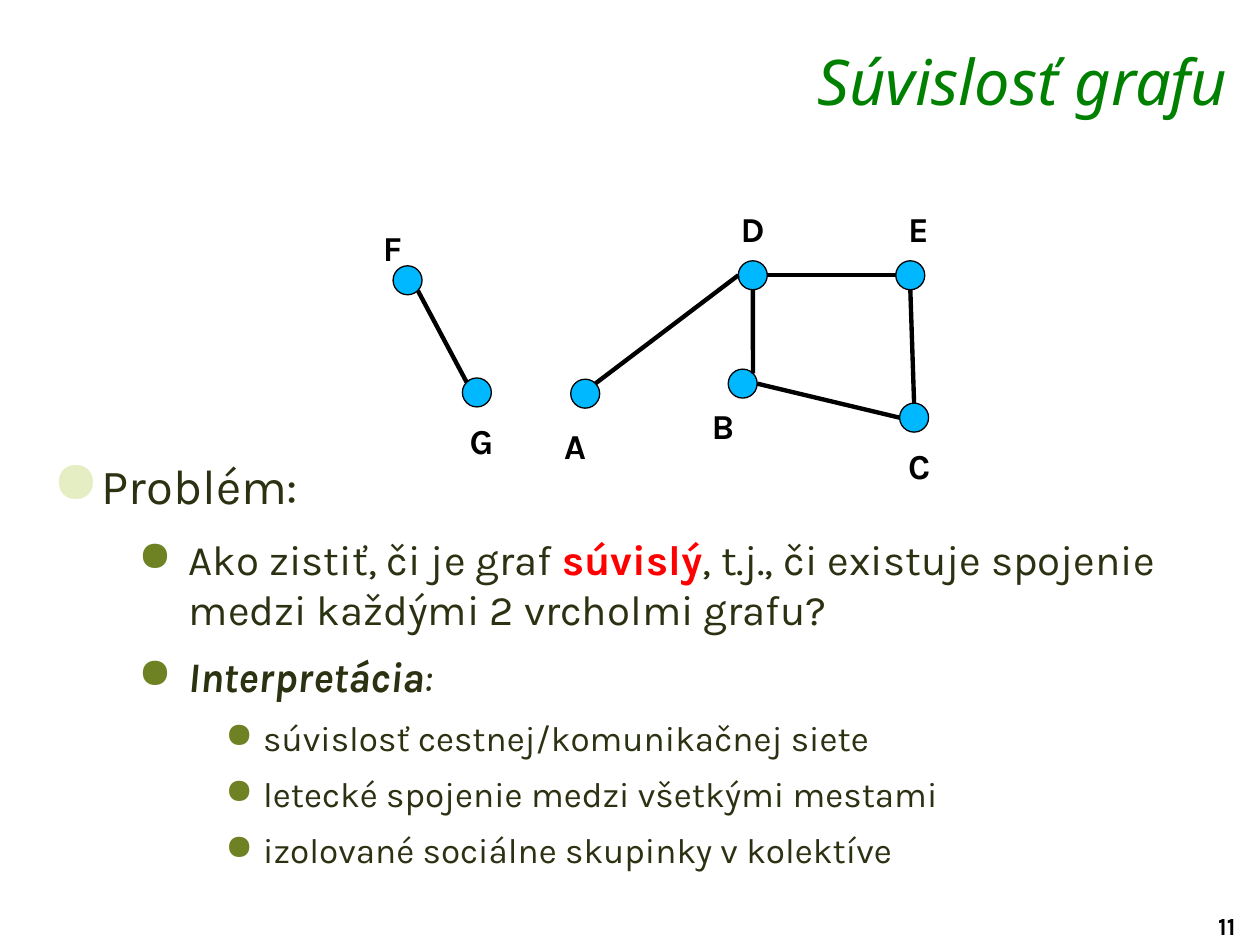
from math import cos, radians, sin

from lxml import etree
from pptx import Presentation
from pptx.dml.color import RGBColor
from pptx.enum.shapes import MSO_CONNECTOR, MSO_SHAPE
from pptx.enum.text import PP_ALIGN
from pptx.oxml.ns import qn
from pptx.util import Inches, Pt

OLIVE, BLACK, RED = "2B3212", "000000", "FF0000"
NODE_SIZE = 0.23


def color(value):
    return RGBColor.from_string(value)


def add_run(para, text, size, fill, font="Karla", bold=False, italic=False):
    span = para.add_run()
    span.text = text
    span.font.name = font
    span.font.size = Pt(size)
    span.font.bold = bold
    span.font.italic = italic
    span.font.color.rgb = color(fill)


deck = Presentation()
deck.slide_width, deck.slide_height = Inches(10), Inches(7.5)
page = deck.slides.add_slide(deck.slide_layouts[6])
shapes = page.shapes

# Slide number and title
box = shapes.add_textbox(Inches(9.57), Inches(7.18), Inches(0.43), Inches(0.32))
add_run(box.text_frame.paragraphs[0], "11", 14, BLACK, bold=True)

box = shapes.add_textbox(Inches(2.29), Inches(0.29), Inches(7.55), Inches(0.6))
box.text_frame.word_wrap = True
para = box.text_frame.paragraphs[0]
para.alignment = PP_ALIGN.RIGHT
add_run(para, "Súvislosť grafu", 36, "008000", font="Noto Sans", italic=True)

# Bulleted text: level -> size, text indent, hanging indent, bullet colour, bullet percent
levels = [
    (28, 0.39, 0.39, "E5EEC2", 120),
    (24, 1.08, 0.4, "6E8224", 100),
    (20, 1.67, 0.3, "6E8224", 100),
]
# Each run: text, colour, bold, italic
items = [
    (0, [("Problém:", OLIVE, False, False)]),
    (1, [("Ako zistiť, či je graf ", OLIVE, False, False),
         ("súvislý", RED, True, False),
         (", t.j., či existuje spojenie medzi každými 2 vrcholmi grafu?", OLIVE, False, False)]),
    (1, [("Interpretácia", OLIVE, True, True), (":", OLIVE, False, True)]),
    (2, [("súvislosť cestnej/komunikačnej siete", OLIVE, False, False)]),
    (2, [("letecké spojenie medzi všetkými mestami", OLIVE, False, False)]),
    (2, [("izolované sociálne skupinky v kolektíve", OLIVE, False, False)]),
]
box = shapes.add_textbox(Inches(0.32), Inches(3.57), Inches(9.38), Inches(3.63))
frame = box.text_frame
frame.word_wrap = True
for index, (level, runs) in enumerate(items):
    size, indent, hanging, bullet_color, percent = levels[level]
    para = frame.add_paragraph() if index else frame.paragraphs[0]
    para.level = level
    para.space_before = Pt(0.2 * size if index else 0)
    para.space_after = Pt(0.2 * size)
    properties = para._p.get_or_add_pPr()
    properties.set("marL", str(Inches(indent)))
    properties.set("indent", str(-Inches(hanging)))
    bullet_fill = etree.SubElement(properties, qn("a:buClr"))
    etree.SubElement(bullet_fill, qn("a:srgbClr"), val=bullet_color)
    etree.SubElement(properties, qn("a:buSzPct"), val=str(percent * 1000))
    etree.SubElement(properties, qn("a:buChar"), char="●")
    for text, fill, bold, italic in runs:
        add_run(para, text, size, fill, bold=bold, italic=italic)

# Graph: node left, top, then label left, top
nodes = {
    "A": (4.53, 3.01, 4.38, 3.32),
    "B": (5.78, 2.93, 5.55, 3.16),
    "C": (7.14, 3.2, 7.11, 3.48),
    "D": (5.86, 2.07, 5.78, 1.6),
    "E": (7.11, 2.07, 7.11, 1.6),
    "F": (3.12, 2.11, 2.94, 1.75),
    "G": (3.67, 3, 3.63, 3.28),
}
for name, (left, top, label_left, label_top) in nodes.items():
    node = shapes.add_shape(MSO_SHAPE.OVAL, Inches(left), Inches(top),
                            Inches(NODE_SIZE), Inches(NODE_SIZE))
    node.shadow.inherit = False
    node.fill.solid()
    node.fill.fore_color.rgb = color("00B8FF")
    node.line.color.rgb = color(BLACK)
    node.line.width = Pt(0.75)
    label = shapes.add_textbox(Inches(label_left), Inches(label_top), Inches(0.37), Inches(0.44))
    label.text_frame.word_wrap = False
    add_run(label.text_frame.paragraphs[0], name, 20, BLACK, bold=True)

# Edges join points on the node rims, given by angle clockwise from the right
edges = [
    ("A", -45, "D", 180),
    ("D", 0, "E", 180),
    ("B", -45, "D", 90),
    ("B", 0, "C", 180),
    ("C", -90, "E", 90),
    ("G", -135, "F", 45),
]
for start, start_angle, end, end_angle in edges:
    points = []
    for name, angle in ((start, start_angle), (end, end_angle)):
        left, top = nodes[name][:2]
        points.append(Inches(left + NODE_SIZE / 2 * (1 + cos(radians(angle)))))
        points.append(Inches(top + NODE_SIZE / 2 * (1 + sin(radians(angle)))))
    edge = shapes.add_connector(MSO_CONNECTOR.STRAIGHT, *points)
    edge.line.color.rgb = color(BLACK)
    edge.line.width = Pt(2.5)
    etree.SubElement(edge._element.spPr, qn("a:effectLst"))

deck.save("out.pptx")
